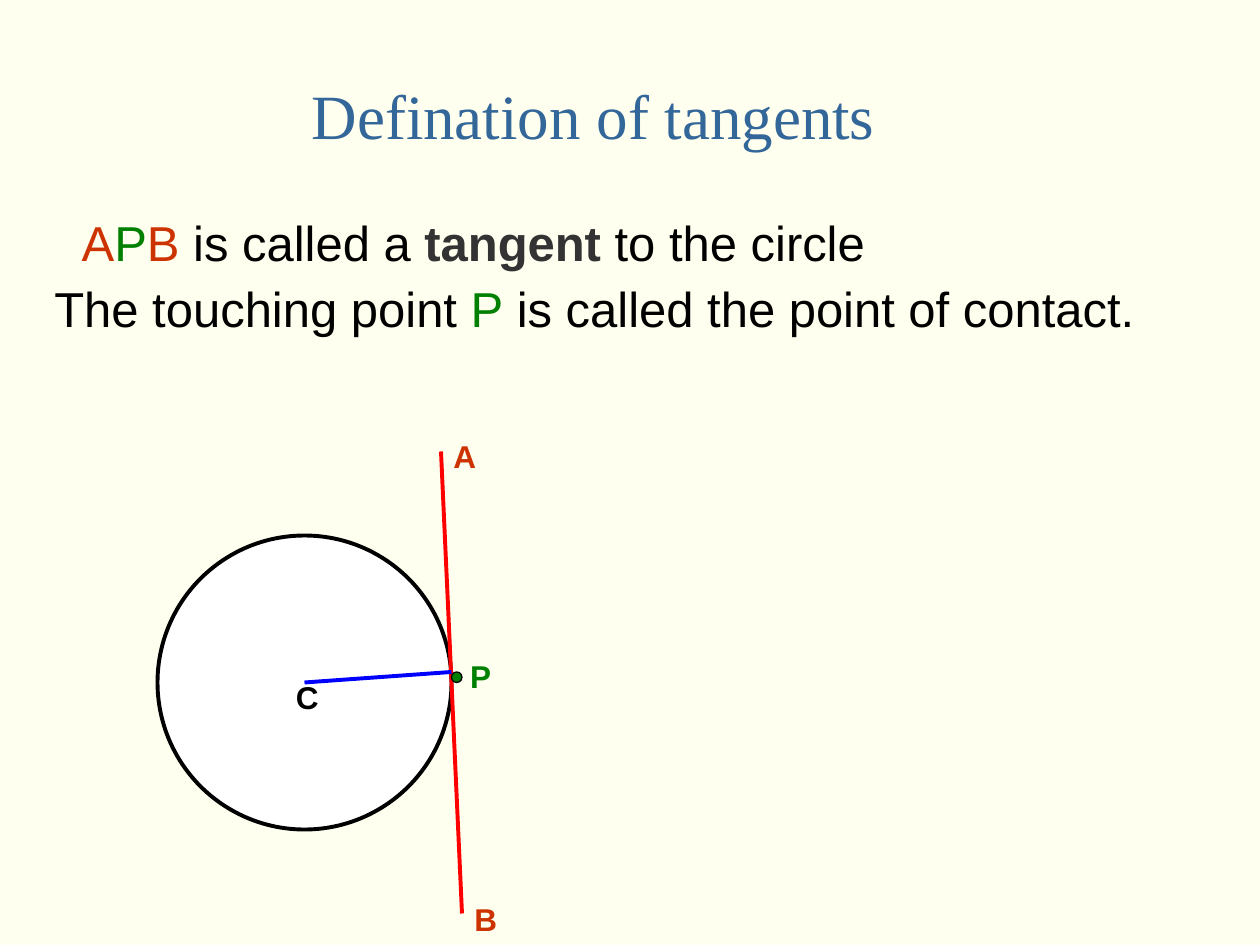
"""Build the slide that defines a tangent to a circle."""
from pptx import Presentation
from pptx.dml.color import RGBColor
from pptx.enum.shapes import MSO_CONNECTOR, MSO_SHAPE
from pptx.enum.text import MSO_ANCHOR, PP_ALIGN
from pptx.oxml.xmlchemy import OxmlElement
from pptx.util import Pt

LINE = MSO_CONNECTOR.STRAIGHT
OVAL = MSO_SHAPE.OVAL
TOP = MSO_ANCHOR.TOP
LEFT, MID = PP_ALIGN.LEFT, PP_ALIGN.CENTER

CREAM = RGBColor(0xFF, 0xFF, 0xEF)
WHITE = RGBColor(0xFF, 0xFF, 0xFF)
BLACK = RGBColor(0, 0, 0)
GREY = RGBColor(0x33, 0x33, 0x33)
RUST = RGBColor(0xCC, 0x33, 0)
GREEN = RGBColor(0, 0x80, 0)
RED = RGBColor(0xFF, 0, 0)
BLUE = RGBColor(0, 0, 0xFF)
STEEL = RGBColor(0x33, 0x66, 0x99)

SANS, SERIF = "Arial", "Times New Roman"
HANG = 27


def add_box(slide, x, y, w, h, wrap=False, inset=3.6):
    box = slide.shapes.add_textbox(Pt(x), Pt(y), Pt(w), Pt(h))
    frame = box.text_frame
    frame.word_wrap = wrap
    frame.vertical_anchor = TOP
    frame.margin_top = Pt(inset)
    return frame


def add_run(para, text, size, color, bold=False, font=SANS):
    run = para.add_run()
    run.text = text
    run.font.name = font
    run.font.size = Pt(size)
    run.font.bold = bold
    run.font.color.rgb = color


def add_title(slide, text):
    para = add_box(slide, 78, 36, 522, 72, inset=7.6).paragraphs[0]
    para.alignment = MID
    add_run(para, text, 36, STEEL, font=SERIF)


def add_body(slide, lines):
    frame = add_box(slide, 24, 120, 678, 84, wrap=True, inset=5.5)
    for i, (start, runs) in enumerate(lines):
        para = frame.add_paragraph() if i else frame.paragraphs[0]
        para.alignment = LEFT
        para.line_spacing = 0.9
        para.space_before = Pt(7 if i else 0)
        props = para._p.get_or_add_pPr()
        props.set("marL", str(Pt(HANG)))
        props.set("indent", str(Pt(start - HANG)))
        for text, color, bold in runs:
            add_run(para, text, 28, color, bold)


def add_label(slide, text, x, y, color):
    para = add_box(slide, x, y, 27, 29).paragraphs[0]
    add_run(para, text, 18, color, True)


def add_disc(slide, x, y, size, fill, width):
    disc = slide.shapes.add_shape(OVAL, Pt(x), Pt(y), Pt(size), Pt(size))
    disc.shadow.inherit = False
    disc.fill.solid()
    disc.fill.fore_color.rgb = fill
    disc.line.color.rgb = BLACK
    disc.line.width = Pt(width)


def add_line(slide, x1, y1, x2, y2, color):
    line = slide.shapes.add_connector(LINE, Pt(x1), Pt(y1), Pt(x2), Pt(y2))
    line.line.color.rgb = color
    line.line.width = Pt(2.25)
    line._element.spPr.append(OxmlElement("a:effectLst"))


def main():
    deck = Presentation()
    deck.slide_width, deck.slide_height = Pt(720), Pt(540)
    slide = deck.slides.add_slide(deck.slide_layouts[6])
    slide.background.fill.solid()
    slide.background.fill.fore_color.rgb = CREAM

    add_body(slide, [
        (15.6, [("A", RUST, False), ("P", GREEN, False), ("B", RUST, False),
                (" is called a ", BLACK, False), ("tangent ", GREY, True),
                ("to the circle", BLACK, False)]),
        (0, [("The touching point ", BLACK, False), ("P", GREEN, False),
             (" is called the point of contact.", BLACK, False)]),
    ])
    add_disc(slide, 90, 306, 168, WHITE, 2.25)
    add_line(slide, 252, 258, 264, 522, RED)
    add_line(slide, 258, 384, 174, 390, BLUE)
    for text, x, y, color in [("C", 162, 384, BLACK), ("A", 252, 246, RUST),
                              ("B", 264, 511, RUST), ("P", 261.5, 372, GREEN)]:
        add_label(slide, text, x, y, color)
    add_title(slide, "Defination of tangents")
    add_disc(slide, 258, 384, 6, GREEN, 0.75)
    deck.save("out.pptx")


if __name__ == "__main__":
    main()
